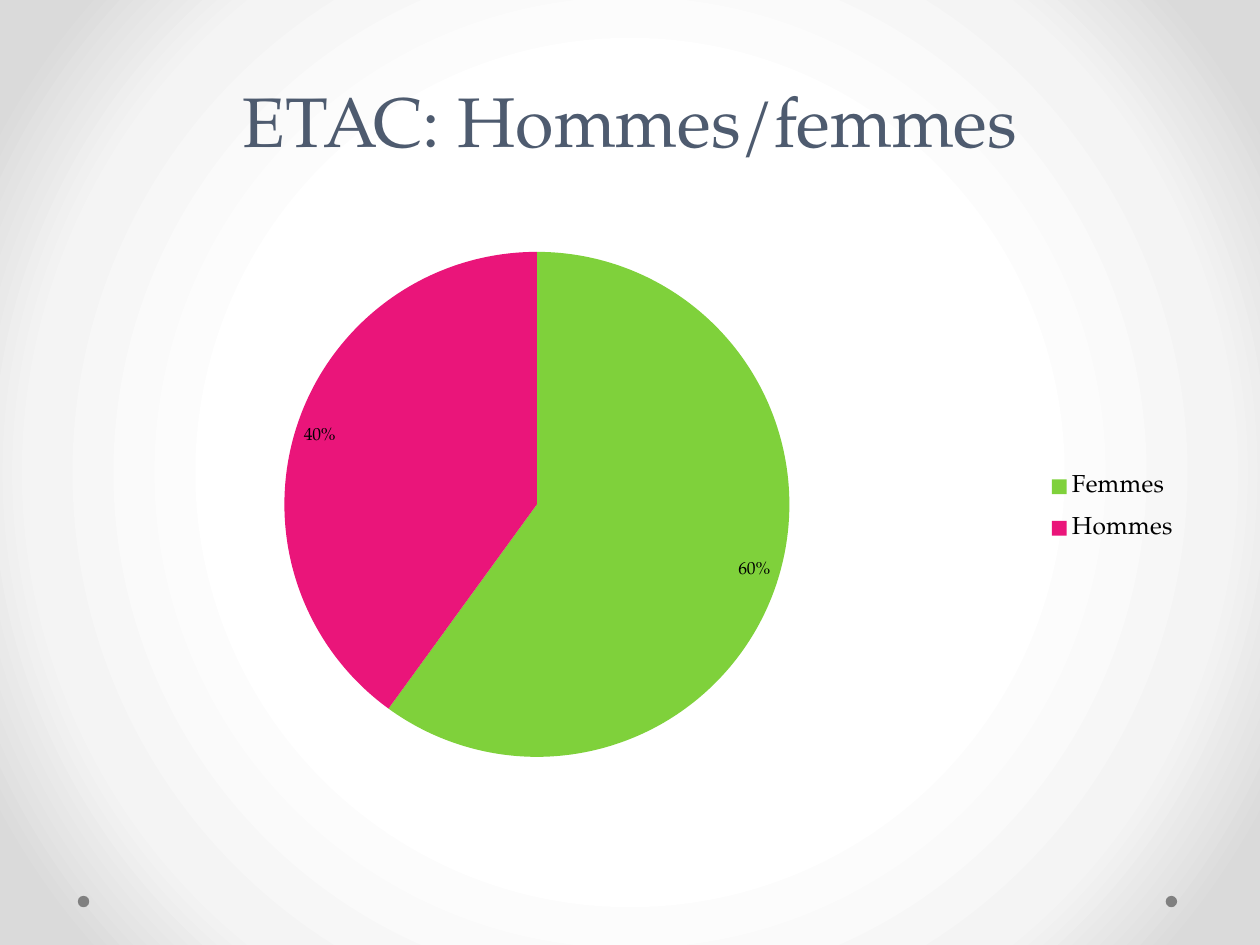
from pptx import Presentation
from pptx.chart.data import CategoryChartData
from pptx.dml.color import RGBColor
from pptx.enum.chart import XL_CHART_TYPE, XL_LABEL_POSITION, XL_LEGEND_POSITION
from pptx.enum.shapes import MSO_SHAPE
from pptx.enum.text import MSO_ANCHOR, PP_ALIGN
from pptx.oxml import parse_xml
from pptx.oxml.ns import nsdecls, qn
from pptx.util import Cm, Pt

# Content
TITLE = "ETAC: Hommes/femmes"
SHARES = [("Femmes", 60, "green"), ("Hommes", 40, "pink")]

# Look and places (lengths in cm)
FONT = "TeX Gyre Pagella"
COLORS = {"title": "4E5B6F", "text": "000000", "dot": "808080",
          "green": "7FD13B", "pink": "EA157A"}
BACKGROUND_STOPS = [(50, "FFFFFF"), (76, "F4F4F4"), (92, "DADADA")]
TITLE_BOX = (1.27, 0, 22.86, 4.45)
CHART_BOX = (2.84, 4.45, 21.29, 12.57)
DOT_LEFTS, DOT_TOP, DOT_SIZE = (1.57, 23.5), 18.06, 0.23
PLOT_LAYOUT = {"x": 0.0, "y": 0.05, "w": 0.75, "h": 0.81}
LEGEND_LAYOUT = {"x": 0.85, "y": 0.38, "w": 0.14, "h": 0.16}


def color(name):
    return RGBColor.from_string(COLORS[name])


def format_font(font, size, color_name):
    for name, value in {"name": FONT, "size": Pt(size), "bold": False}.items():
        setattr(font, name, value)
    font.color.rgb = color(color_name)


def set_background(slide):
    stops = "".join(f'<a:gs pos="{position * 1000}"><a:srgbClr val="{value}"/></a:gs>'
                    for position, value in BACKGROUND_STOPS)
    slide.element.cSld.insert(0, parse_xml(
        f'<p:bg {nsdecls("p", "a")}><p:bgPr><a:gradFill rotWithShape="1">'
        f'<a:gsLst>{stops}</a:gsLst><a:path path="circle">'
        '<a:fillToRect l="50000" t="50000" r="50000" b="50000"/></a:path>'
        '</a:gradFill><a:effectLst/></p:bgPr></p:bg>'))


def set_layout(parent, index, layout, target=""):
    for old in parent.findall(qn("c:layout")):
        parent.remove(old)
    sizes = "".join(f'<c:{key} val="{value}"/>' for key, value in layout.items())
    parent.insert(index, parse_xml(
        f'<c:layout {nsdecls("c")}><c:manualLayout>{target}'
        f'<c:xMode val="edge"/><c:yMode val="edge"/>{sizes}'
        '</c:manualLayout></c:layout>'))


def add_dots(slide):
    for left in DOT_LEFTS:
        dot = slide.shapes.add_shape(MSO_SHAPE.OVAL, Cm(left), Cm(DOT_TOP),
                                     Cm(DOT_SIZE), Cm(DOT_SIZE))
        dot.shadow.inherit = False
        dot.fill.solid()
        dot.fill.fore_color.rgb = color("dot")
        dot.line.fill.background()


def add_title(slide):
    title = slide.shapes.title
    for name, value in zip(("left", "top", "width", "height"), TITLE_BOX):
        setattr(title, name, Cm(value))
    frame = title.text_frame
    frame.text = TITLE
    frame.vertical_anchor = MSO_ANCHOR.MIDDLE
    paragraph = frame.paragraphs[0]
    paragraph.alignment = PP_ALIGN.CENTER
    paragraph.line_spacing = Pt(58)
    format_font(paragraph.font, 40, "title")


def add_pie(slide):
    data = CategoryChartData()
    data.categories = [name for name, _, _ in SHARES]
    data.add_series("Series 1", [share for _, share, _ in SHARES])
    chart = slide.shapes.add_chart(XL_CHART_TYPE.PIE, *map(Cm, CHART_BOX), data).chart
    chart.has_title = False
    format_font(chart.font, 10, "text")

    # Slices and their percentages
    plot = chart.plots[0]
    plot.vary_by_categories = True
    for index, (_, _, color_name) in enumerate(SHARES):
        slice_format = plot.series[0].points[index].format
        slice_format.fill.solid()
        slice_format.fill.fore_color.rgb = color(color_name)
        slice_format.line.fill.background()
    plot.has_data_labels = True
    labels = plot.data_labels
    label_values = {"show_percentage": True, "show_value": False,
                    "number_format": "0%", "number_format_is_linked": False,
                    "position": XL_LABEL_POSITION.INSIDE_END}
    for name, value in label_values.items():
        setattr(labels, name, value)
    format_font(labels.font, 10, "text")

    # Legend and fixed layout
    chart.has_legend = True
    chart.legend.position = XL_LEGEND_POSITION.RIGHT
    chart.legend.include_in_layout = False
    format_font(chart.legend.font, 14, "text")
    chart_element = chart.element.find(qn("c:chart"))
    set_layout(chart_element.find(qn("c:plotArea")), 0, PLOT_LAYOUT,
               '<c:layoutTarget val="inner"/>')
    set_layout(chart_element.find(qn("c:legend")), 1, LEGEND_LAYOUT)


def main():
    presentation = Presentation()
    presentation.slide_width, presentation.slide_height = Cm(25.4), Cm(19.05)
    slide = presentation.slides.add_slide(presentation.slide_layouts[5])
    set_background(slide)
    add_dots(slide)
    add_title(slide)
    add_pie(slide)
    presentation.save("out.pptx")


if __name__ == "__main__":
    main()
